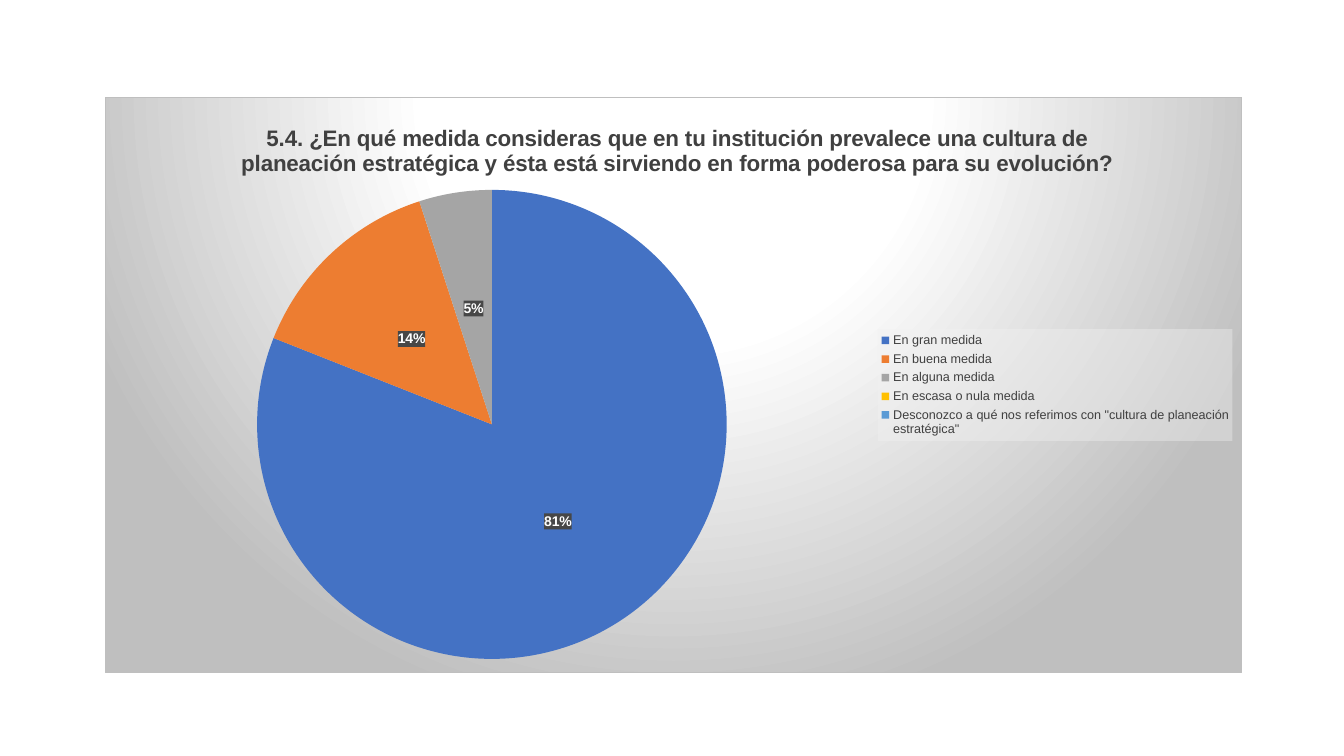
"""Builds a slide with one survey pie chart on a radial grey panel."""
from dataclasses import dataclass

from lxml import etree
from pptx import Presentation
from pptx.chart.chart import Chart
from pptx.chart.data import CategoryChartData
from pptx.dml.color import RGBColor
from pptx.enum.chart import XL_CHART_TYPE, XL_LABEL_POSITION, XL_LEGEND_POSITION
from pptx.oxml import parse_xml
from pptx.oxml.ns import nsdecls
from pptx.text.text import Font
from pptx.util import Inches, Pt

PIE = XL_CHART_TYPE.PIE
LABEL_CENTER = XL_LABEL_POSITION.CENTER
LEGEND_RIGHT = XL_LEGEND_POSITION.RIGHT

FONT_NAME = "Arial"
TITLE = (
    "5.4. ¿En qué medida consideras que en tu institución prevalece una cultura de "
    "planeación estratégica y ésta está sirviendo en forma poderosa para su evolución?"
)
COLORS = {
    "blue": "4472C4",
    "orange": "ED7D31",
    "grey": "A5A5A5",
    "gold": "FFC000",
    "sky": "5B9BD5",
    "white": "FFFFFF",
    "black": "000000",
    "text": "404040",
    "label_box": "474747",
    "legend_box": "F2F2F2",
    "panel_edge": "BFBFBF",
}


@dataclass(frozen=True)
class Answer:
    """One answer with its percentage and slice colour."""

    text: str
    percent: int
    color: str


@dataclass(frozen=True)
class Box:
    """A rectangle given in percent of its container."""

    left: float
    top: float
    width: float = 0
    height: float = 0


ANSWERS = (
    Answer("En gran medida", 81, "blue"),
    Answer("En buena medida", 14, "orange"),
    Answer("En alguna medida", 5, "grey"),
    Answer("En escasa o nula medida", 0, "gold"),
    Answer(
        'Desconozco a qué nos referimos con "cultura de planeación estratégica"', 0, "sky"
    ),
)
PANEL = Box(7.8, 12.8, 84.62, 76.27)
TITLE_PLACE = Box(11.6, 4)
PIE_PLACE = Box(13.35, 16.1, 41.35, 81.5)
LEGEND_PLACE = Box(68, 40.3, 31.2, 19.4)


def style_font(font: Font, size: float, color: str, bold: bool = False) -> None:
    """Set face, size, colour and weight of a font."""
    font.name = FONT_NAME
    font.size = Pt(size)
    font.bold = bold
    font.color.rgb = RGBColor.from_string(COLORS[color])


def place(part: etree.ElementBase, box: Box, index: int) -> None:
    """Give a chart part a manual layout as child number index."""
    for layout in part.xpath("c:layout"):
        part.remove(layout)
    inner = '<c:layoutTarget val="inner"/>' if index == 0 else ""
    size = (
        f'<c:w val="{box.width / 100}"/><c:h val="{box.height / 100}"/>' if box.width else ""
    )
    part.insert(index, parse_xml(
        f'<c:layout {nsdecls("c")}><c:manualLayout>{inner}'
        '<c:xMode val="edge"/><c:yMode val="edge"/>'
        f'<c:x val="{box.left / 100}"/><c:y val="{box.top / 100}"/>{size}'
        "</c:manualLayout></c:layout>"
    ))


def fill_before_text(part: etree.ElementBase, fill: str, line: str = "<a:noFill/>") -> None:
    """Insert fill and outline ahead of the text properties of a chart part."""
    part.xpath("c:txPr")[0].addprevious(parse_xml(
        f'<c:spPr {nsdecls("c", "a")}>{fill}<a:ln w="{Pt(0.75)}">{line}</a:ln></c:spPr>'
    ))


def solid(color: str, opacity: int = 100) -> str:
    """Return the XML of a solid fill with opacity in percent."""
    return (
        f'<a:solidFill><a:srgbClr val="{COLORS[color]}">'
        f'<a:alpha val="{opacity * 1000}"/></a:srgbClr></a:solidFill>'
    )


def panel_gradient() -> str:
    """Return the XML of the radial panel fill."""
    stops = "".join(
        f'<a:gs pos="{position * 1000}"><a:srgbClr val="{COLORS[color]}"/></a:gs>'
        for position, color in ((0, "white"), (39, "white"), (100, "panel_edge"))
    )
    return (
        f'<a:gradFill><a:gsLst>{stops}</a:gsLst><a:path path="circle">'
        '<a:fillToRect l="50000" t="-80000" r="50000" b="180000"/></a:path></a:gradFill>'
    )


def style_title(chart: Chart) -> None:
    """Write and place the question."""
    chart.has_title = True
    text_frame = chart.chart_title.text_frame
    text_frame.text = TITLE
    style_font(text_frame.paragraphs[0].runs[0].font, 16, "text", True)
    place(chart.element.xpath("c:chart/c:title")[0], TITLE_PLACE, 1)


def style_legend(chart: Chart) -> None:
    """Show the answers to the right of the pie."""
    chart.has_legend = True
    chart.legend.position = LEGEND_RIGHT
    chart.legend.include_in_layout = False
    style_font(chart.legend.font, 9, "text")
    legend = chart.element.xpath("c:chart/c:legend")[0]
    place(legend, LEGEND_PLACE, 1)
    fill_before_text(legend, solid("legend_box", 39))


def style_pie(chart: Chart) -> None:
    """Colour the slices and label those that are not empty."""
    plot = chart.plots[0]
    plot.vary_by_categories = True
    series = plot.series[0]
    labels = series.data_labels
    labels.show_percentage = True
    labels.show_value = False
    labels.number_format = "0%"
    labels.number_format_is_linked = False
    labels.position = LABEL_CENTER
    style_font(labels.font, 10, "white", True)
    label_element = chart.element.xpath(".//c:ser/c:dLbls")[0]
    fill_before_text(label_element, solid("label_box"))
    empty_count = 0
    for index, answer in enumerate(ANSWERS):
        point_format = series.points[index].format
        point_format.fill.solid()
        point_format.fill.fore_color.rgb = RGBColor.from_string(COLORS[answer.color])
        point_format.line.fill.background()
        if answer.percent == 0:
            label_element.insert(empty_count, parse_xml(
                f'<c:dLbl {nsdecls("c")}><c:idx val="{index}"/><c:delete val="1"/></c:dLbl>'
            ))
            empty_count += 1
    place(chart.element.xpath("c:chart/c:plotArea")[0], PIE_PLACE, 0)


def main() -> None:
    """Create the presentation and save it."""
    presentation = Presentation()
    presentation.slide_width = Inches(13.33)
    presentation.slide_height = Inches(7.5)
    slide = presentation.slides.add_slide(presentation.slide_layouts[6])
    data = CategoryChartData()
    data.categories = [answer.text for answer in ANSWERS]
    data.add_series("Series 1", [answer.percent for answer in ANSWERS])
    column, row = presentation.slide_width / 100, presentation.slide_height / 100
    chart = slide.shapes.add_chart(
        PIE,
        int(PANEL.left * column),
        int(PANEL.top * row),
        int(PANEL.width * column),
        int(PANEL.height * row),
        data,
    ).chart
    style_font(chart.font, 10, "black")
    fill_before_text(chart.element, panel_gradient(), solid("panel_edge"))
    style_title(chart)
    style_legend(chart)
    style_pie(chart)
    presentation.save("out.pptx")


if __name__ == "__main__":
    main()
